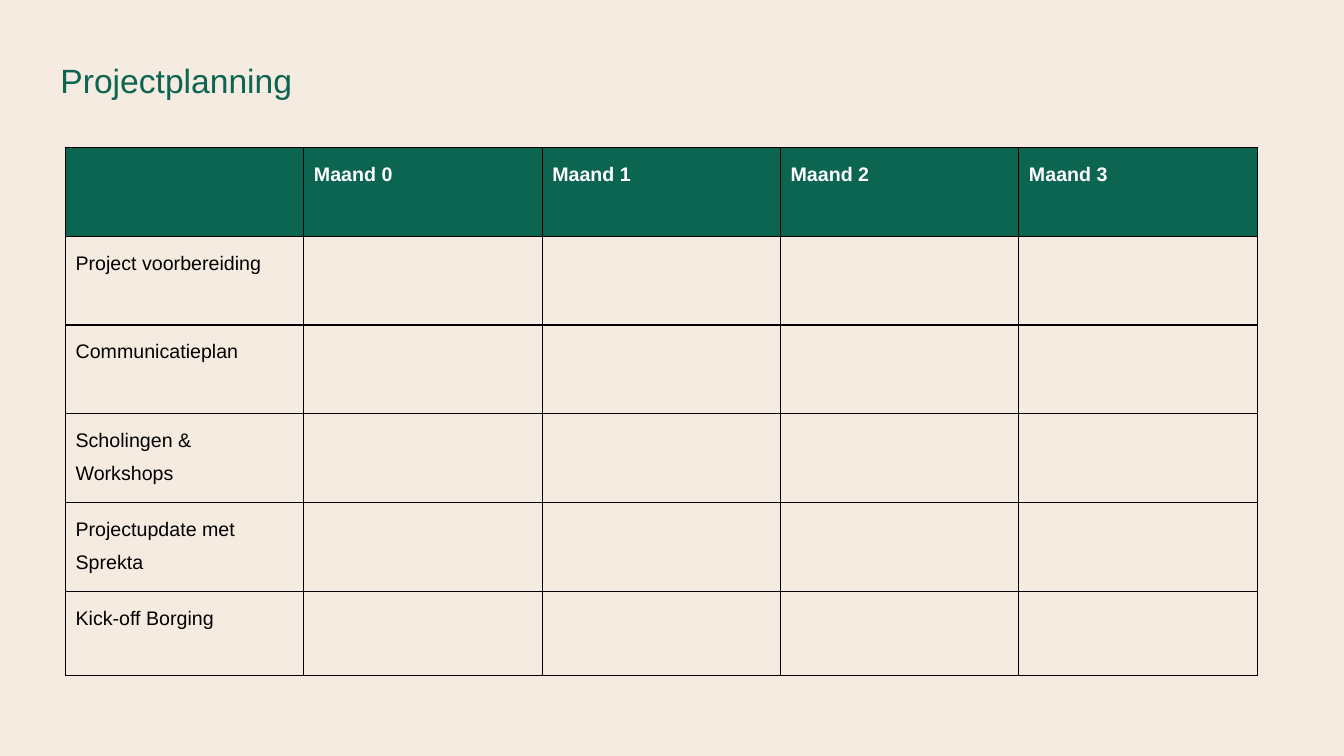
"""Build the project planning slide: a title above a month-by-month table."""
from dataclasses import dataclass
from typing import Any

from lxml.etree import SubElement
from pptx import Presentation
from pptx.dml.color import RGBColor
from pptx.enum.text import MSO_ANCHOR, MSO_AUTO_SIZE, PP_ALIGN
from pptx.oxml.ns import qn
from pptx.slide import Slide
from pptx.table import _Cell
from pptx.text.text import TextFrame
from pptx.util import Pt

GREEN = RGBColor(0x0B, 0x65, 0x51)
CREAM = RGBColor(0xF5, 0xEB, 0xE1)
WHITE = RGBColor(0xFF, 0xFF, 0xFF)
BLACK = RGBColor(0x00, 0x00, 0x00)

MONTHS = [f"Maand {number}" for number in range(4)]
ACTIVITIES = [
    "Project voorbereiding",
    "Communicatieplan",
    "Scholingen & Workshops",
    "Projectupdate met Sprekta",
    "Kick-off Borging",
]
TABLE_LEFT, TABLE_TOP = 46.8, 105.4
COLUMN_WIDTH = 170.25
ROW_HEIGHT, LAST_ROW_HEIGHT = 63.4, 60


@dataclass(frozen=True)
class CellStyle:
    fill: RGBColor
    color: RGBColor
    bold: bool


HEADER = CellStyle(GREEN, WHITE, True)
BODY = CellStyle(CREAM, BLACK, False)


def apply_format(target: Any, values: dict[str, Any]) -> None:
    for name, value in values.items():
        setattr(target, name, value)


def write_text(frame: TextFrame, text: str, size: float, color: RGBColor,
               bold: bool, spacing: float) -> None:
    para = frame.paragraphs[0]
    apply_format(para, {"alignment": PP_ALIGN.LEFT, "line_spacing": spacing})
    span = para.add_run()
    span.text = text
    apply_format(span.font, {"name": "Arial", "size": Pt(size), "bold": bold})
    span.font.color.rgb = color


def add_borders(cell: _Cell) -> None:
    properties = cell._tc.get_or_add_tcPr()
    for side in ("L", "R", "T", "B"):
        line = SubElement(properties, qn(f"a:ln{side}"), w=str(Pt(1)))
        fill = SubElement(line, qn("a:solidFill"))
        SubElement(fill, qn("a:srgbClr"), val=str(BLACK))


def draw_cell(cell: _Cell, text: str, style: CellStyle) -> None:
    add_borders(cell)
    cell.fill.solid()
    cell.fill.fore_color.rgb = style.fill
    if text:
        write_text(cell.text_frame, text, 14, style.color, style.bold, 1.5)


def draw_title(page: Slide) -> None:
    title = page.shapes.title
    apply_format(title, {"left": Pt(36), "top": Pt(39),
                         "width": Pt(803.5), "height": Pt(36)})
    apply_format(title.text_frame, {
        "word_wrap": True,
        "vertical_anchor": MSO_ANCHOR.MIDDLE,
        "auto_size": MSO_AUTO_SIZE.SHAPE_TO_FIT_TEXT,
    })
    write_text(title.text_frame, "Projectplanning", 24, GREEN, False, 1.0)


def draw_planning(page: Slide) -> None:
    rows = [["", *MONTHS]] + [[activity] + [""] * len(MONTHS) for activity in ACTIVITIES]
    heights = [ROW_HEIGHT] * len(ACTIVITIES) + [LAST_ROW_HEIGHT]
    columns = len(rows[0])
    table = page.shapes.add_table(
        len(rows), columns, Pt(TABLE_LEFT), Pt(TABLE_TOP),
        Pt(COLUMN_WIDTH * columns), Pt(sum(heights))).table
    table.horz_banding = False
    for column in table.columns:
        column.width = Pt(COLUMN_WIDTH)
    for index, (row, height, texts) in enumerate(zip(table.rows, heights, rows)):
        row.height = Pt(height)
        for cell, text in zip(row.cells, texts):
            draw_cell(cell, text, BODY if index else HEADER)


def main() -> None:
    deck = Presentation()
    apply_format(deck, {"slide_width": Pt(960), "slide_height": Pt(540)})
    page = deck.slides.add_slide(deck.slide_layouts[5])
    page.background.fill.solid()
    page.background.fill.fore_color.rgb = CREAM
    draw_title(page)
    draw_planning(page)
    deck.save("out.pptx")


if __name__ == "__main__":
    main()
